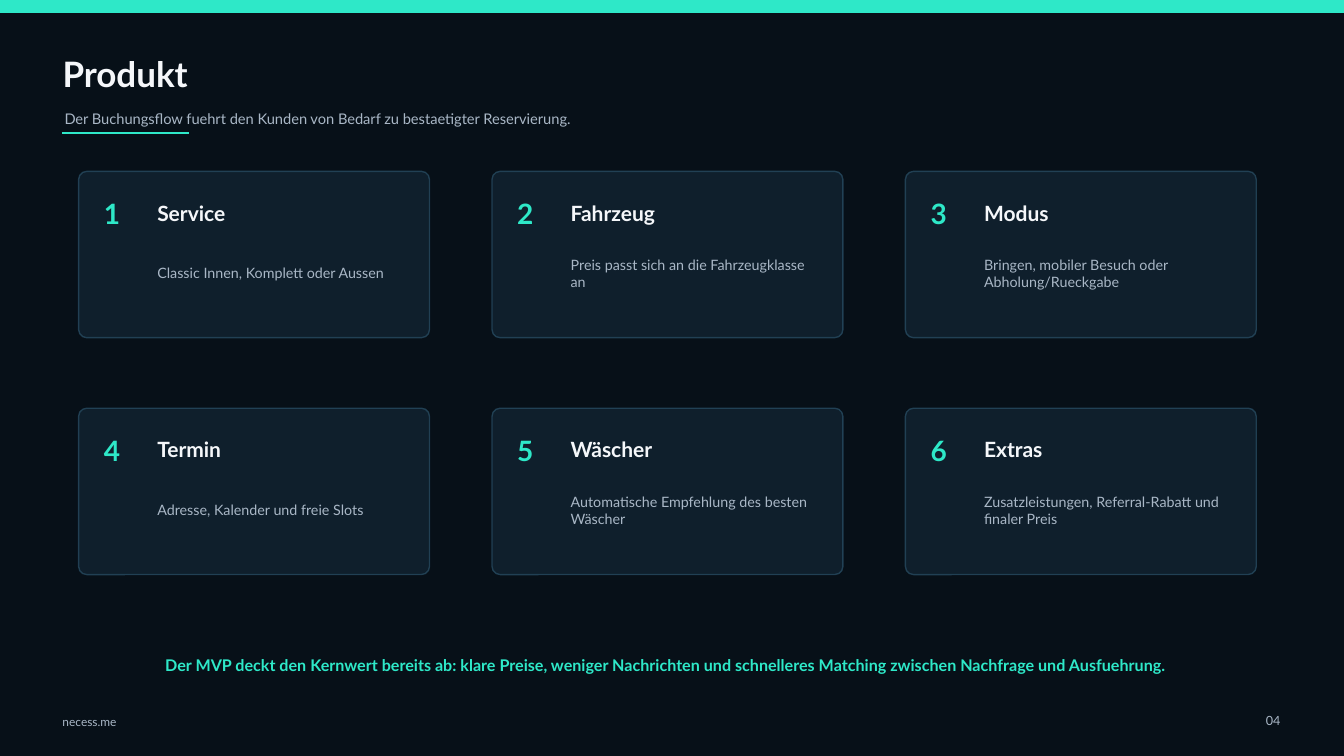
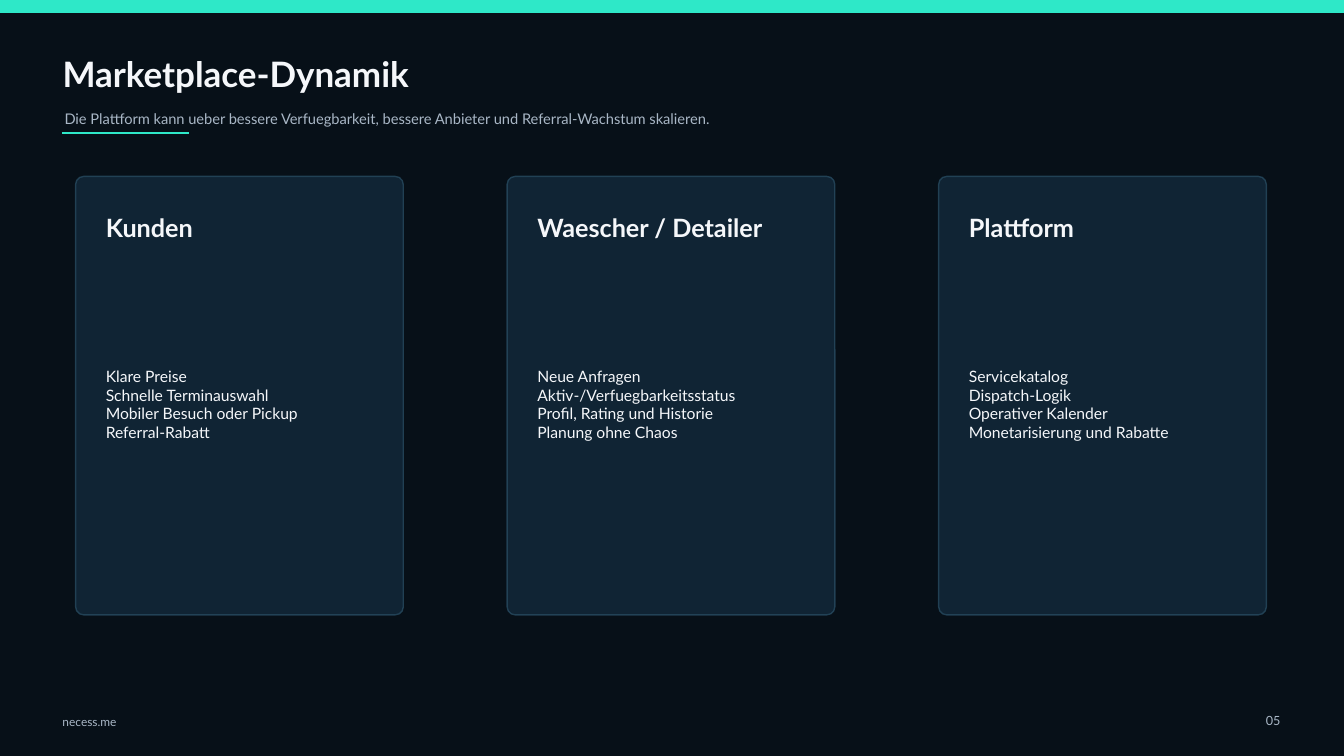
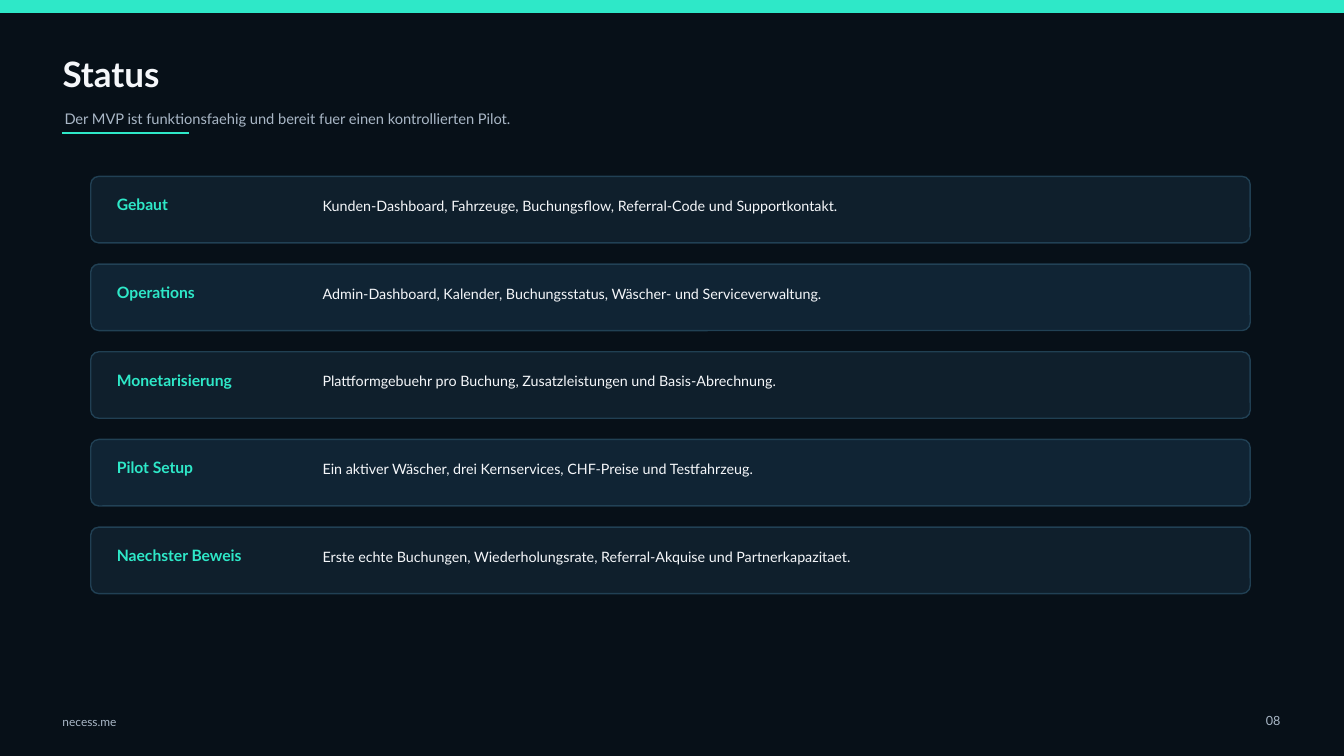
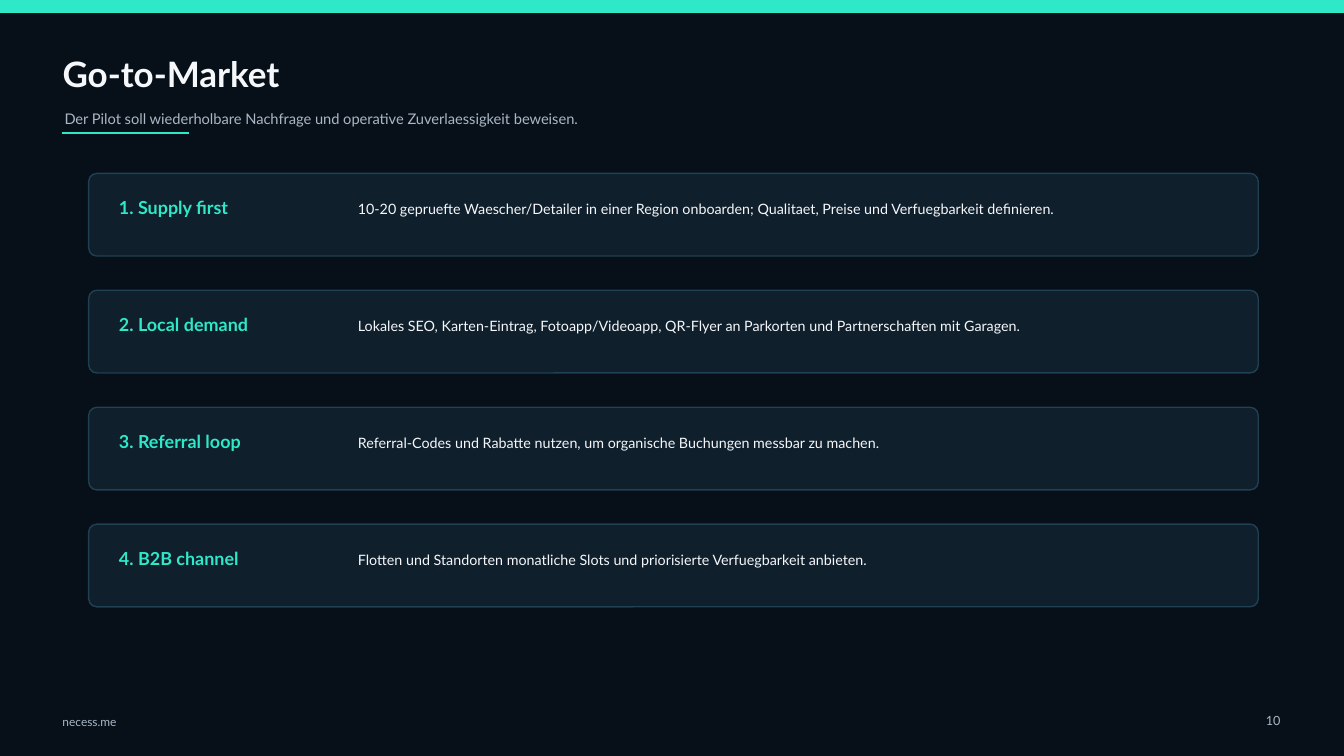
"""Build four pitch slides on a dark theme with teal accents."""
import lxml.etree
import pptx
import pptx.dml.color
import pptx.enum.shapes
import pptx.enum.text
import pptx.oxml
import pptx.oxml.ns
import pptx.util

EMU_PER_PX = 9144
WIDTH, HEIGHT = 1333, 750
TITLE_ONLY = 5
FONT = "Lato"
NIGHT = "071018"
TEAL = "2EE8C8"
WHITE = "F5F7FA"
MUTED = "A9B7C6"
CARD = "0F1F2C"
CARD_LIGHT = "102434"
CARD_BORDER = "25475C"
CARD_RADIUS = 8
BORDER_ALPHA = 85
Align = pptx.enum.text.PP_ALIGN
Shape = pptx.enum.shapes.MSO_SHAPE


def px(*lengths):
    """Turn pixel lengths into a list of EMU lengths."""
    return [pptx.util.Emu(length * EMU_PER_PX) for length in lengths]


def rgb(value):
    """Turn a hex string into a colour."""
    return pptx.dml.color.RGBColor.from_string(value)


def write_text(frame, text, *, size, color=WHITE, bold=False, align=Align.LEFT):
    """Fill a text frame with one paragraph for each line of the text."""
    frame.auto_size = pptx.enum.text.MSO_AUTO_SIZE.NONE
    frame.word_wrap = True
    frame.vertical_anchor = pptx.enum.text.MSO_ANCHOR.MIDDLE
    frame.margin_left = frame.margin_top = frame.margin_right = frame.margin_bottom = 0
    frame.text = text
    for paragraph in frame.paragraphs:
        paragraph.alignment = align
        paragraph.font.name = FONT
        paragraph.font.size = pptx.util.Pt(size)
        paragraph.font.bold = bold
        paragraph.font.color.rgb = rgb(color)


class Deck:
    """Holds the presentation, its style and the current slide."""

    def __init__(self):
        """Start a presentation with the shared background."""
        self.presentation = pptx.Presentation()
        self.presentation.slide_width, self.presentation.slide_height = px(WIDTH, HEIGHT)
        background = self.presentation.slide_master.background.fill
        background.solid()
        background.fore_color.rgb = rgb(NIGHT)
        self.slide = None

    def start_slide(self, title, subtitle, number):
        """Add a slide with its band, heading and footer."""
        layout = self.presentation.slide_layouts[TITLE_ONLY]
        self.slide = self.presentation.slides.add_slide(layout)
        heading = self.slide.shapes.title
        heading.left, heading.top, heading.width, heading.height = px(62, 45, 880, 55)
        write_text(heading.text_frame, title, size=25, bold=True)
        self.shape(Shape.RECTANGLE, 0, 0, WIDTH, 12, fill=TEAL, border=TEAL)
        self.text(subtitle, 64, 100, 920, 36, size=10.5, color=MUTED)
        self.rule(62, 132, 187)
        self.text("necess.me", 62, 705, 140, 22, size=8.5, color=MUTED)
        self.text(number, 1225, 702, 45, 25, size=9, color=MUTED, align=Align.RIGHT)

    def shape(self, kind, left, top, width, height, *, fill, border):
        """Add a filled preset shape with a thin border."""
        shape = self.slide.shapes.add_shape(kind, *px(left, top, width, height))
        shape.shadow.inherit = False
        shape.fill.solid()
        shape.fill.fore_color.rgb = rgb(fill)
        shape.line.color.rgb = rgb(border)
        shape.line.width = pptx.util.Pt(1)
        return shape

    def card(self, left, top, width, height, fill=CARD):
        """Add a rounded card with a slightly transparent border."""
        card = self.shape(Shape.ROUNDED_RECTANGLE, left, top, width, height,
                          fill=fill, border=CARD_BORDER)
        card.adjustments[0] = CARD_RADIUS / min(width, height)
        qn = pptx.oxml.ns.qn
        color = card.line._get_or_add_ln().find(".//" + qn("a:srgbClr"))
        lxml.etree.SubElement(color, qn("a:alpha"), val=str(BORDER_ALPHA * 1000))

    def rule(self, left, top, right):
        """Add a horizontal accent line."""
        line = self.slide.shapes.add_connector(
            pptx.enum.shapes.MSO_CONNECTOR.STRAIGHT, *px(left, top, right, top))
        line.line.color.rgb = rgb(TEAL)
        line.line.width = pptx.util.Pt(2)
        properties = line._element.spPr
        lxml.etree.SubElement(properties, pptx.oxml.ns.qn("a:effectLst"))

    def text(self, text, left, top, width, height, **style):
        """Add a text box."""
        box = self.slide.shapes.add_textbox(*px(left, top, width, height))
        write_text(box.text_frame, text, **style)

    def step(self, left, top, number, name, detail):
        """Add a numbered step card."""
        self.card(left, top, 348, 165)
        self.text(str(number), left + 25, top + 24, 38, 36, size=20, color=TEAL, bold=True)
        self.text(name, left + 78, top + 27, 245, 28, size=15, bold=True)
        self.text(detail, left + 78, top + 72, 238, 58, size=10.2, color=MUTED)

    def column(self, left, name, points):
        """Add a tall card with a heading and a list of points."""
        top = 175
        self.card(left, top, 325, 435, fill=CARD_LIGHT)
        self.text(name, left + 30, top + 33, 255, 36, size=18, bold=True)
        self.text("\n".join(points), left + 30, top + 91, 260, 270, size=11.2)

    def status_row(self, top, label, detail, fill):
        """Add a low status card with a label and a detail."""
        self.card(90, top, 1150, 66, fill=fill)
        self.text(label, 116, top + 18, 210, 20, size=11.2, color=TEAL, bold=True)
        self.text(detail, 320, top + 17, 860, 24, size=10.2)

    def market_row(self, top, label, detail):
        """Add a market phase card with a label and a detail."""
        self.card(88, top, 1160, 82)
        self.text(label, 118, top + 22, 235, 24, size=12.8, color=TEAL, bold=True)
        self.text(detail, 355, top + 17, 820, 36, size=10.2)


STEPS = [
    ("Service", "Classic Innen, Komplett oder Aussen"),
    ("Fahrzeug", "Preis passt sich an die Fahrzeugklasse an"),
    ("Modus", "Bringen, mobiler Besuch oder Abholung/Rueckgabe"),
    ("Termin", "Adresse, Kalender und freie Slots"),
    ("Wäscher", "Automatische Empfehlung des besten Wäscher"),
    ("Extras", "Zusatzleistungen, Referral-Rabatt und finaler Preis"),
]
COLUMNS = [
    ("Kunden", ["Klare Preise", "Schnelle Terminauswahl",
                "Mobiler Besuch oder Pickup", "Referral-Rabatt"]),
    ("Waescher / Detailer", ["Neue Anfragen", "Aktiv-/Verfuegbarkeitsstatus",
                             "Profil, Rating und Historie", "Planung ohne Chaos"]),
    ("Plattform", ["Servicekatalog", "Dispatch-Logik",
                   "Operativer Kalender", "Monetarisierung und Rabatte"]),
]
STATUS = [
    ("Gebaut", "Kunden-Dashboard, Fahrzeuge, Buchungsflow, Referral-Code und Supportkontakt."),
    ("Operations", "Admin-Dashboard, Kalender, Buchungsstatus, Wäscher- und Serviceverwaltung."),
    ("Monetarisierung", "Plattformgebuehr pro Buchung, Zusatzleistungen und Basis-Abrechnung."),
    ("Pilot Setup", "Ein aktiver Wäscher, drei Kernservices, CHF-Preise und Testfahrzeug."),
    ("Naechster Beweis",
     "Erste echte Buchungen, Wiederholungsrate, Referral-Akquise und Partnerkapazitaet."),
]
PHASES = [
    ("1. Supply first", "10-20 gepruefte Waescher/Detailer in einer Region onboarden; "
                        "Qualitaet, Preise und Verfuegbarkeit definieren."),
    ("2. Local demand", "Lokales SEO, Karten-Eintrag, Fotoapp/Videoapp, QR-Flyer an "
                        "Parkorten und Partnerschaften mit Garagen."),
    ("3. Referral loop",
     "Referral-Codes und Rabatte nutzen, um organische Buchungen messbar zu machen."),
    ("4. B2B channel",
     "Flotten und Standorten monatliche Slots und priorisierte Verfuegbarkeit anbieten."),
]


def main():
    """Build and save the slides."""
    deck = Deck()

    deck.start_slide(
        "Produkt",
        "Der Buchungsflow fuehrt den Kunden von Bedarf zu bestaetigter Reservierung.", "04")
    for index, (name, detail) in enumerate(STEPS):
        row, column = divmod(index, 3)
        deck.step(78 + 410 * column, 170 + 235 * row, index + 1, name, detail)
    deck.text("Der MVP deckt den Kernwert bereits ab: klare Preise, weniger Nachrichten und "
              "schnelleres Matching zwischen Nachfrage und Ausfuehrung.",
              100, 642, 1120, 35, size=11.5, color=TEAL, bold=True, align=Align.CENTER)

    deck.start_slide(
        "Marketplace-Dynamik",
        "Die Plattform kann ueber bessere Verfuegbarkeit, bessere Anbieter und "
        "Referral-Wachstum skalieren.", "05")
    for index, (name, points) in enumerate(COLUMNS):
        deck.column(75 + 428 * index, name, points)

    deck.start_slide(
        "Status",
        "Der MVP ist funktionsfaehig und bereit fuer einen kontrollierten Pilot.", "08")
    for index, (label, detail) in enumerate(STATUS):
        deck.status_row(175 + 87 * index, label, detail, (CARD, CARD_LIGHT)[index % 2])

    deck.start_slide(
        "Go-to-Market",
        "Der Pilot soll wiederholbare Nachfrage und operative Zuverlaessigkeit beweisen.", "10")
    for index, (label, detail) in enumerate(PHASES):
        deck.market_row(172 + 116 * index, label, detail)

    deck.presentation.save("out.pptx")


if __name__ == "__main__":
    main()
